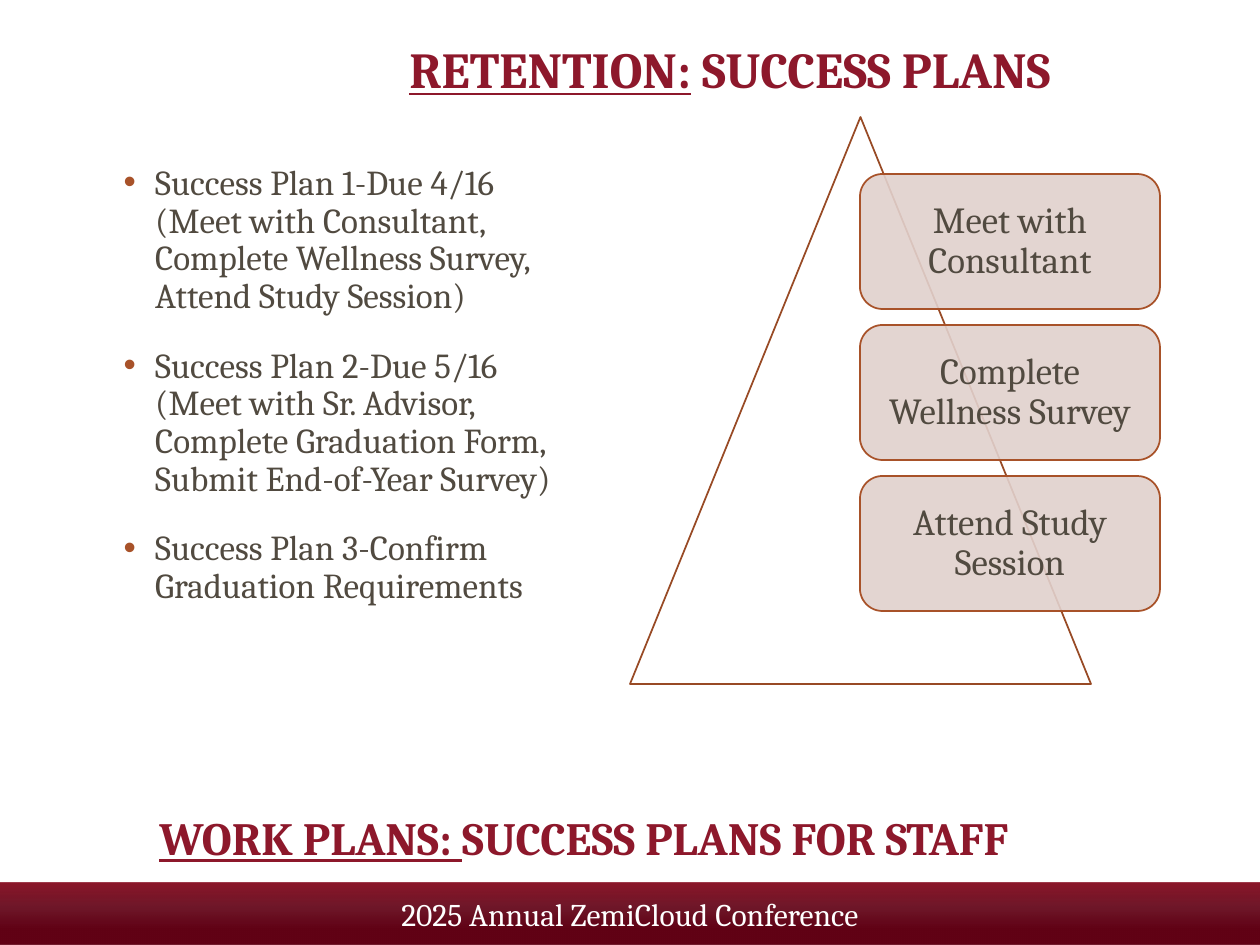
from dataclasses import dataclass

from lxml import etree
from pptx import Presentation
from pptx import util as u
from pptx.dml.color import RGBColor
from pptx.enum import shapes, text
from pptx.oxml import ns

EMU_PER_PX = 914400 / 126
FONT = "Cambria"
COLORS = {
    "maroon": "8D182B",
    "dark_maroon": "610215",
    "rust": "A85229",
    "dark_rust": "984A25",
    "blush": "E1D1CD",
    "body": "514A40",
    "white": "FFFFFF",
}


@dataclass(frozen=True)
class Area:
    left: int
    top: int
    width: int
    height: int

    def emu(self) -> list[u.Emu]:
        return [px(n) for n in (self.left, self.top, self.width, self.height)]


@dataclass(frozen=True)
class Heading:
    area: Area
    underlined: str
    plain: str
    size: float
    spacing: float


HEADINGS = [
    Heading(Area(397, 21, 761, 85), "RETENTION:", " SUCCESS PLANS", 28.8, 0.9),
    Heading(Area(147, 786, 965, 85), "WORK PLANS: ", "SUCCESS PLANS FOR STAFF", 26.4, 0.8),
]
PLANS = [
    "Success Plan 1-Due 4/16 (Meet with Consultant, Complete Wellness Survey, "
    "Attend Study Session)",
    "Success Plan 2-Due 5/16 (Meet with Sr. Advisor, Complete Graduation Form, "
    "Submit End-of-Year Survey)",
    "Success Plan 3-Confirm Graduation Requirements",
]
STEPS = ["Meet with Consultant", "Complete Wellness Survey", "Attend Study Session"]
STEP_PITCH = 151
# position in %, colour, opacity in %
FOOTER_STOPS = [
    (0, "dark_maroon", 100),
    (24, "dark_maroon", 100),
    (60, "dark_maroon", 91),
    (100, "maroon", 100),
]


def px(length: int) -> u.Emu:
    return u.Emu(round(length * EMU_PER_PX))


def rgb(name: str) -> RGBColor:
    return RGBColor.from_string(COLORS[name])


def child(parent, tag: str, **attributes: str):
    return etree.SubElement(parent, ns.qn(tag), attributes)


def set_opacity(color, percent: int) -> None:
    child(color, "a:alpha", val=str(percent * 1000))


def add_span(para, words: str, size: float, color: str, bold=False, underline=False) -> None:
    span = para.add_run()
    span.text = words
    font = span.font
    font.name, font.size = FONT, u.Pt(size)
    font.bold, font.underline = bold, underline
    font.color.rgb = rgb(color)


def add_box(page, area: Area):
    box = page.shapes.add_textbox(*area.emu())
    box.text_frame.word_wrap = True
    return box


def add_shape(page, kind, area: Area, fill: str, line: str | None = None):
    shape = page.shapes.add_shape(kind, *area.emu())
    shape.shadow.inherit = False
    shape.fill.solid()
    shape.fill.fore_color.rgb = rgb(fill)
    if line:
        shape.line.color.rgb = rgb(line)
        shape.line.width = u.Pt(1)
    else:
        shape.line.fill.background()
    return shape


def center_text(shape, words: str, size: float, color: str, spacing: float = 1.0) -> None:
    frame = shape.text_frame
    frame.word_wrap = True
    frame.vertical_anchor = text.MSO_ANCHOR.MIDDLE
    para = frame.paragraphs[0]
    para.alignment = text.PP_ALIGN.CENTER
    para.line_spacing = spacing
    add_span(para, words, size, color)


def add_footer(page) -> None:
    bar = add_shape(page, shapes.MSO_SHAPE.RECTANGLE, Area(0, 883, 1260, 62), "maroon")
    bar.fill.gradient()
    bar.fill.gradient_angle = 90
    stops = bar._element.spPr.find(ns.qn("a:gradFill")).find(ns.qn("a:gsLst"))
    for stop in list(stops):
        stops.remove(stop)
    for position, color, opacity in FOOTER_STOPS:
        stop = child(stops, "a:gs", pos=str(position * 1000))
        set_opacity(child(stop, "a:srgbClr", val=COLORS[color]), opacity)
    center_text(bar, "2025 Annual ZemiCloud Conference", 18, "white")


def add_heading(page, heading: Heading) -> None:
    frame = add_box(page, heading.area).text_frame
    frame.vertical_anchor = text.MSO_ANCHOR.BOTTOM
    para = frame.paragraphs[0]
    para.line_spacing = heading.spacing
    add_span(para, heading.underlined, heading.size, "maroon", bold=True, underline=True)
    add_span(para, heading.plain, heading.size, "maroon", bold=True)


def add_bullet(para) -> None:
    properties = para._p.get_or_add_pPr()
    properties.set("marL", str(u.Inches(0.3)))
    properties.set("indent", str(u.Inches(-0.25)))
    child(child(properties, "a:buClr"), "a:srgbClr", val=COLORS["rust"])
    child(properties, "a:buFont", typeface="Arial")
    child(properties, "a:buChar", char="•")


def add_plans(page) -> None:
    frame = add_box(page, Area(105, 159, 489, 527)).text_frame
    for index, plan in enumerate(PLANS):
        para = frame.add_paragraph() if index else frame.paragraphs[0]
        add_bullet(para)
        para.line_spacing = 0.9
        para.space_before = u.Pt(18 if index else 0)
        add_span(para, plan, 20, "body")


def add_step(page, area: Area, words: str) -> None:
    card = add_shape(page, shapes.MSO_SHAPE.ROUNDED_RECTANGLE, area, "blush", "rust")
    fill = card._element.spPr.find(ns.qn("a:solidFill"))
    set_opacity(fill.find(ns.qn("a:srgbClr")), 90)
    frame = card.text_frame
    frame.margin_left = frame.margin_right = px(12)
    frame.margin_top = frame.margin_bottom = px(12)
    center_text(card, words, 21, "body", 0.9)


def main() -> None:
    deck = Presentation()
    deck.slide_width, deck.slide_height = px(1260), px(945)
    page = deck.slides.add_slide(deck.slide_layouts[6])
    add_footer(page)
    add_plans(page)
    add_shape(page, shapes.MSO_SHAPE.ISOSCELES_TRIANGLE, Area(630, 117, 461, 567),
              "white", "dark_rust")
    for index, step in enumerate(STEPS):
        add_step(page, Area(860, 174 + index * STEP_PITCH, 300, 135), step)
    for heading in HEADINGS:
        add_heading(page, heading)
    deck.save("out.pptx")


if __name__ == "__main__":
    main()
